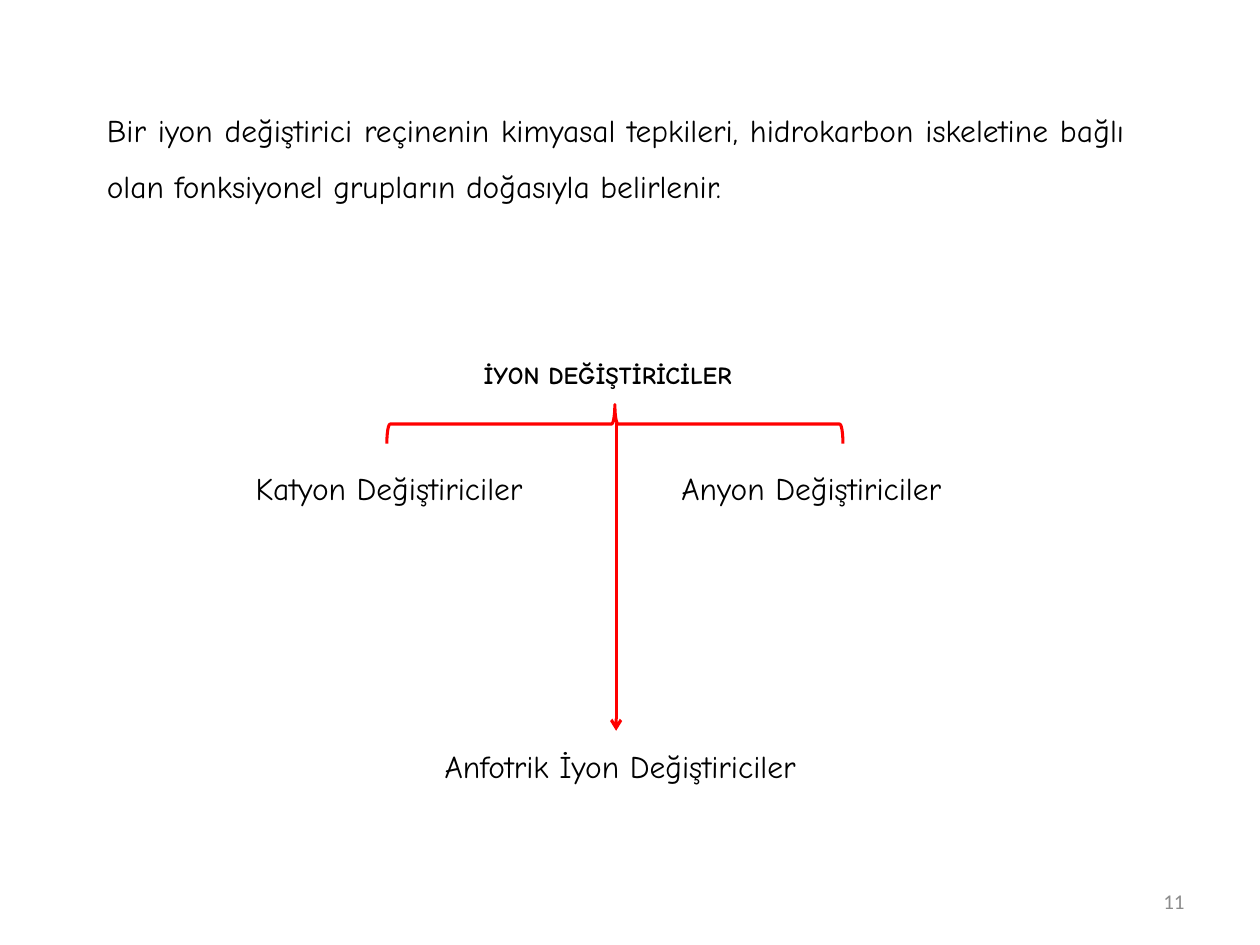
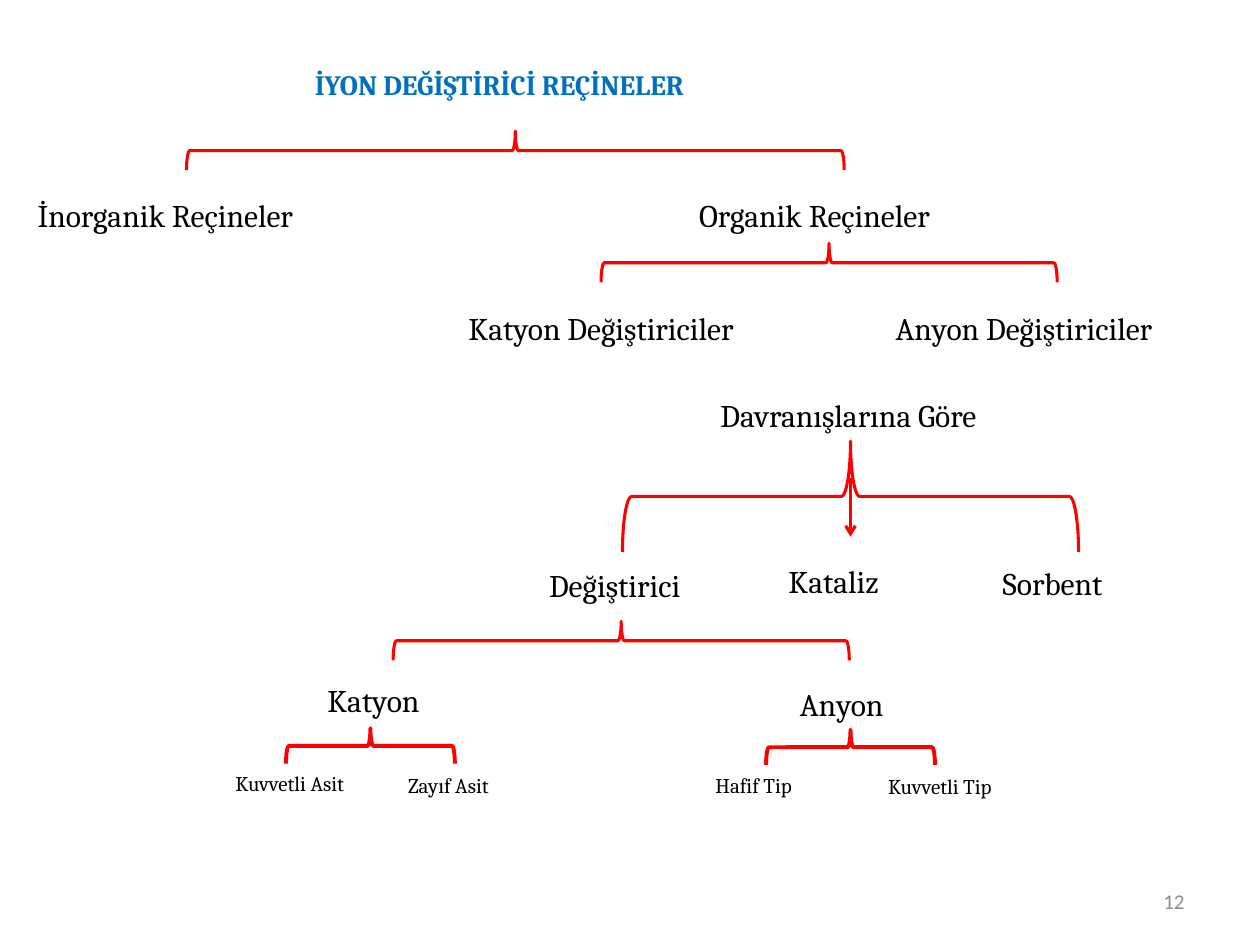
from dataclasses import dataclass

from lxml import etree
from pptx import Presentation
from pptx.dml.color import RGBColor
from pptx.enum.shapes import MSO_CONNECTOR, MSO_SHAPE
from pptx.enum.text import MSO_ANCHOR, MSO_AUTO_SIZE, PP_ALIGN
from pptx.oxml.ns import qn
from pptx.util import Inches, Pt

STRAIGHT = MSO_CONNECTOR.STRAIGHT
RIGHT_BRACE, LEFT_BRACE = MSO_SHAPE.RIGHT_BRACE, MSO_SHAPE.LEFT_BRACE
MIDDLE, FIT_SHAPE = MSO_ANCHOR.MIDDLE, MSO_AUTO_SIZE.SHAPE_TO_FIT_TEXT
LEFT, RIGHT, JUSTIFY = PP_ALIGN.LEFT, PP_ALIGN.RIGHT, PP_ALIGN.JUSTIFY

COLORS = {"text": "000000", "title": "0070C0", "branch": "FF0000", "number": "8C8C8C"}
COMIC, CAMBRIA, CALIBRI = "Comic Neue", "Cambria", "Calibri"
LABEL_WIDTH, LABEL_HEIGHT, SMALL_WIDTH = 2.76, 0.4, 1.28
BRACE_SPAN, BRACE_DEPTH = 3.62, 0.31


@dataclass
class Box:
    """A rectangle in inches."""
    left: float
    top: float
    width: float
    height: float = LABEL_HEIGHT

    def inner(self, left, top, width, height=LABEL_HEIGHT):
        """Return a box offset from this one's corner."""
        return Box(self.left + left, self.top + top, width, height)


def add_text(slide, box, text, font, size=18, color="text", bold=False, align=LEFT):
    """Add a wrapping text box with one run and return its shape."""
    shape = slide.shapes.add_textbox(
        Inches(box.left), Inches(box.top), Inches(box.width), Inches(box.height))
    frame = shape.text_frame
    frame.word_wrap = True
    frame.auto_size = FIT_SHAPE
    paragraph = frame.paragraphs[0]
    paragraph.alignment = align
    run = paragraph.add_run()
    run.text = text
    run.font.name = font
    run.font.size = Pt(size)
    run.font.bold = bold
    run.font.color.rgb = RGBColor.from_string(COLORS[color])
    return shape


def style_line(line, weight):
    """Give a line the branch colour and a weight."""
    line.color.rgb = RGBColor.from_string(COLORS["branch"])
    line.width = Pt(weight)


def add_brace(slide, box, kind=RIGHT_BRACE, rotation=270, weight=1.75):
    """Add a brace turned to point up that fills the box as seen."""
    left = box.left + (box.width - box.height) / 2
    top = box.top + (box.height - box.width) / 2
    brace = slide.shapes.add_shape(
        kind, Inches(left), Inches(top), Inches(box.height), Inches(box.width))
    brace.rotation = rotation
    brace.shadow.inherit = False
    brace.fill.background()
    style_line(brace.line, weight)


def add_down_arrow(slide, box):
    """Add an arrow down the left edge of the box."""
    x = Inches(box.left)
    arrow = slide.shapes.add_connector(
        STRAIGHT, x, Inches(box.top), x, Inches(box.top + box.height))
    style_line(arrow.line, 1.75)
    etree.SubElement(arrow.line._get_or_add_ln(), qn("a:tailEnd"), type="arrow")
    etree.SubElement(arrow._element.spPr, qn("a:effectLst"))


def add_slide(presentation, number):
    """Add a blank slide with its number in the footer."""
    slide = presentation.slides.add_slide(presentation.slide_layouts[6])
    shape = add_text(slide, Box(7.17, 6.95, 2.33), str(number), CALIBRI, 12, "number", align=RIGHT)
    shape.text_frame.auto_size = MSO_AUTO_SIZE.NONE
    shape.text_frame.vertical_anchor = MIDDLE
    return slide


def draw_introduction(slide, box):
    """Draw the justified opening sentence."""
    shape = add_text(
        slide, box, "Bir iyon değiştirici reçinenin kimyasal tepkileri, hidrokarbon iskeletine "
        "bağlı olan fonksiyonel grupların doğasıyla belirlenir.", COMIC, align=JUSTIFY)
    shape.text_frame.paragraphs[0].line_spacing = 1.5


def draw_exchangers(slide, box):
    """Draw the three families of ion exchangers."""
    add_text(slide, box.inner(1.81, 0, 2.52, 0.34), "İYON DEĞİŞTİRİCİLER", COMIC, 14, bold=True)
    add_brace(slide, box.inner(1.14, 0.4, BRACE_SPAN, BRACE_DEPTH))
    for left, name in ((0, "Katyon Değiştiriciler"), (3.38, "Anyon Değiştiriciler")):
        add_text(slide, box.inner(left, 0.86, LABEL_WIDTH), name, COMIC)
    add_down_arrow(slide, box.inner(2.96, 0.55, 0, 2.44))
    add_text(slide, box.inner(1.5, 3.07, 3.54), "Anfotrik İyon Değiştiriciler", COMIC)


def draw_resins(slide, box):
    """Draw the resin classes and the organic subclasses."""
    add_text(slide, box.inner(2.2, 0, 4.17, 0.37), "İYON DEĞİŞTİRİCİ REÇİNELER",
             CAMBRIA, 16, "title", True)
    add_brace(slide, box.inner(1.28, 0.55, 5.22, BRACE_DEPTH))
    add_brace(slide, box.inner(4.57, 1.44, BRACE_SPAN, BRACE_DEPTH))
    labels = (
        (0, 1.02, "İnorganik Reçineler"),
        (5.25, 1.02, "Organik Reçineler"),
        (3.42, 1.91, "Katyon Değiştiriciler"),
        (6.81, 1.91, "Anyon Değiştiriciler"),
    )
    for left, top, name in labels:
        add_text(slide, box.inner(left, top, LABEL_WIDTH), name, CAMBRIA)


def draw_behaviours(slide, box):
    """Draw the resins by behaviour, with the exchanger's own fork."""
    add_text(slide, box.inner(1.36, 0, LABEL_WIDTH), "Davranışlarına Göre", CAMBRIA)
    add_brace(slide, box.inner(0.68, 0.41, BRACE_SPAN, 0.88))
    add_down_arrow(slide, box.inner(2.49, 0.7, 0, 0.47))
    for left, top, name in ((0, 1.35, "Değiştirici"), (1.9, 1.32, "Kataliz"), (3.6, 1.34, "Sorbent")):
        add_text(slide, box.inner(left, top, 1.46), name, CAMBRIA)
    add_brace(slide, box.inner(-1.14, 1.84, BRACE_SPAN, BRACE_DEPTH))


def draw_strengths(slide, box, name, name_left, name_top, strengths):
    """Draw one exchanger and its two strengths."""
    add_text(slide, box.inner(name_left, name_top, SMALL_WIDTH), name, CAMBRIA)
    add_brace(slide, box.inner(0.5, 0.42, 1.34, 0.28), LEFT_BRACE, 90, 2.25)
    for index, strength in enumerate(strengths):
        add_text(slide, box.inner(1.37 * index, 0.71 + 0.01 * index, SMALL_WIDTH, 0.3),
                 strength, CAMBRIA, 12)


def main():
    """Build and save both slides."""
    presentation = Presentation()
    presentation.slide_width, presentation.slide_height = Inches(10), Inches(7.5)

    slide = add_slide(presentation, 11)
    draw_introduction(slide, Box(0.75, 0.68, 8.27, 0.96))
    draw_exchangers(slide, Box(1.93, 2.81, 6.14, 3.47))

    slide = add_slide(presentation, 12)
    draw_resins(slide, Box(0.2, 0.49, 9.57, 2.31))
    draw_behaviours(slide, Box(4.26, 3.09, 5.06, 2.15))
    draw_strengths(slide, Box(1.77, 5.36, 2.65, 1.02), "Katyon", 0.73, 0,
                   ("Kuvvetli Asit", "Zayıf Asit"))
    draw_strengths(slide, Box(5.58, 5.37, 2.65, 1.02), "Anyon", 0.67, 0.02,
                   ("Hafif Tip", "Kuvvetli Tip"))

    presentation.save("out.pptx")


if __name__ == "__main__":
    main()
